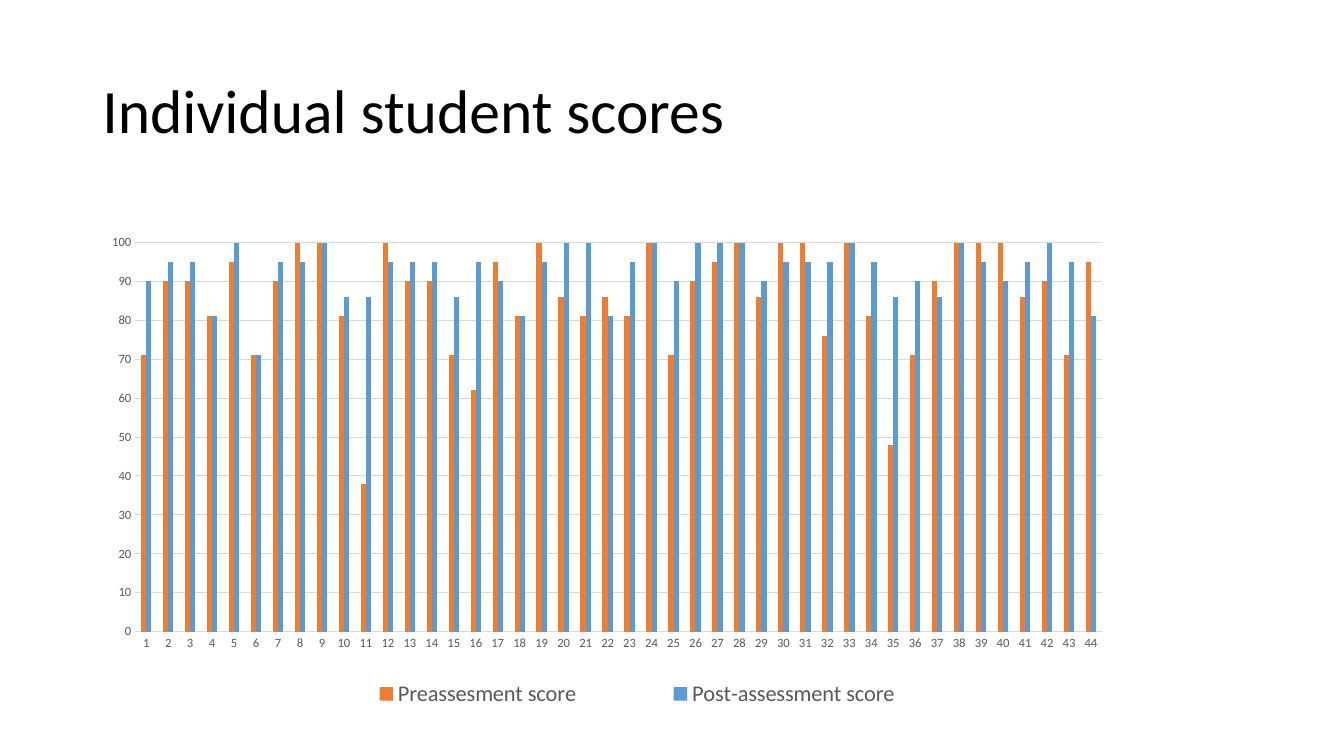
from lxml import etree
from pptx import Presentation
from pptx.chart.data import CategoryChartData
from pptx.dml.color import RGBColor
from pptx.enum.chart import XL_CHART_TYPE, XL_LEGEND_POSITION, XL_TICK_MARK
from pptx.enum.text import MSO_ANCHOR
from pptx.oxml.ns import qn
from pptx.util import Inches, Pt

COLUMNS = XL_CHART_TYPE.COLUMN_CLUSTERED
BOTTOM = XL_LEGEND_POSITION.BOTTOM
NO_TICK = XL_TICK_MARK.NONE
MIDDLE = MSO_ANCHOR.MIDDLE

BLACK = RGBColor(0x00, 0x00, 0x00)
GREY = RGBColor(0x59, 0x59, 0x59)
LIGHT = RGBColor(0xD9, 0xD9, 0xD9)
ORANGE = RGBColor(0xED, 0x7D, 0x31)
BLUE = RGBColor(0x5B, 0x9B, 0xD5)

# Scores of students 1 to 44
PRE = [71, 90, 90, 81, 95, 71, 90, 100, 100, 81, 38,
       100, 90, 90, 71, 62, 95, 81, 100, 86, 81, 86,
       81, 100, 71, 90, 95, 100, 86, 100, 100, 76, 100,
       81, 48, 71, 90, 100, 100, 100, 86, 90, 71, 95]
POST = [90, 95, 95, 81, 100, 71, 95, 95, 100, 86, 86,
        95, 95, 95, 86, 95, 90, 81, 95, 100, 100, 81,
        95, 100, 90, 100, 100, 100, 90, 95, 95, 95, 100,
        95, 86, 90, 86, 100, 95, 90, 95, 100, 95, 81]
SERIES = [("Preassesment score", PRE, ORANGE),
          ("Post-assessment score", POST, BLUE)]


def style_font(font, size, color, name="Calibri"):
    font.size = Pt(size)
    font.name = name
    font.color.rgb = color


def add_text(tf, text, size=18, color=BLACK, spacing=1.0):
    p = tf.paragraphs[0]
    p.line_spacing = spacing
    r = p.add_run()
    r.text = text
    style_font(r.font, size, color)


def style_line(line):
    line.color.rgb = LIGHT
    line.width = Pt(0.75)


def set_layout(parent, x, y, w, h, inner=False):
    """Place a chart part by shares of the chart's size."""
    for old in parent.findall(qn("c:layout")):
        parent.remove(old)
    layout = etree.Element(qn("c:layout"))
    manual = etree.SubElement(layout, qn("c:manualLayout"))
    settings = [("layoutTarget", "inner")] if inner else []
    settings += [("xMode", "edge"), ("yMode", "edge"),
                 ("x", x), ("y", y), ("w", w), ("h", h)]
    for tag, val in settings:
        etree.SubElement(manual, qn("c:" + tag)).set("val", str(val))
    before = parent.find(qn("c:legendPos"))
    parent.insert(0 if before is None else parent.index(before) + 1, layout)


class Deck:
    """Slide on a grid of 160 columns and 90 rows."""

    def __init__(self):
        self.prs = Presentation()
        self.prs.slide_width = Inches(13.33)
        self.prs.slide_height = Inches(7.5)
        self.s = self.prs.slides.add_slide(self.prs.slide_layouts[6])

    def box(self, col, row, cols, rows):
        dx, dy = self.prs.slide_width / 160, self.prs.slide_height / 90
        return int(col * dx), int(row * dy), int(cols * dx), int(rows * dy)

    def title(self, text, *cell):
        tf = self.s.shapes.add_textbox(*self.box(*cell)).text_frame
        tf.word_wrap = True
        tf.vertical_anchor = MIDDLE
        add_text(tf, text, size=44, spacing=0.9)

    def column_chart(self, series, *cell):
        data = CategoryChartData()
        data.categories = [str(n + 1) for n in range(len(series[0][1]))]
        for name, values, _ in series:
            data.add_series(name, values)
        chart = self.s.shapes.add_chart(COLUMNS, *self.box(*cell), data).chart
        chart.has_title = False
        style_font(chart.font, 10, BLACK)

        # Columns
        plot = chart.plots[0]
        plot.gap_width = 219
        plot.overlap = 0
        plot.vary_by_categories = False
        for ser, (_, _, color) in zip(plot.series, series):
            ser.format.fill.solid()
            ser.format.fill.fore_color.rgb = color
        set_layout(chart.element.chart.plotArea,
                   0.037, 0.079, 0.834, 0.751, inner=True)

        # Axes
        for axis in (chart.category_axis, chart.value_axis):
            axis.major_tick_mark = axis.minor_tick_mark = NO_TICK
            style_font(axis.tick_labels.font, 9, GREY)
        style_line(chart.category_axis.format.line)
        scores = chart.value_axis
        scores.minimum_scale, scores.maximum_scale = 0, 100
        scores.major_unit = 10
        scores.format.line.fill.background()
        style_line(scores.major_gridlines.format.line)

        # Legend
        chart.has_legend = True
        chart.legend.position = BOTTOM
        chart.legend.include_in_layout = False
        style_font(chart.legend.font, 16, GREY)
        set_layout(chart.element.chart.find(qn("c:legend")),
                   0.17, 0.9, 0.6, 0.1)


def main():
    deck = Deck()
    deck.title("Individual student scores", 11, 4.8, 138, 17.4)
    deck.column_chart(SERIES, 11, 24, 138, 61.7)
    deck.prs.save("out.pptx")


if __name__ == "__main__":
    main()
